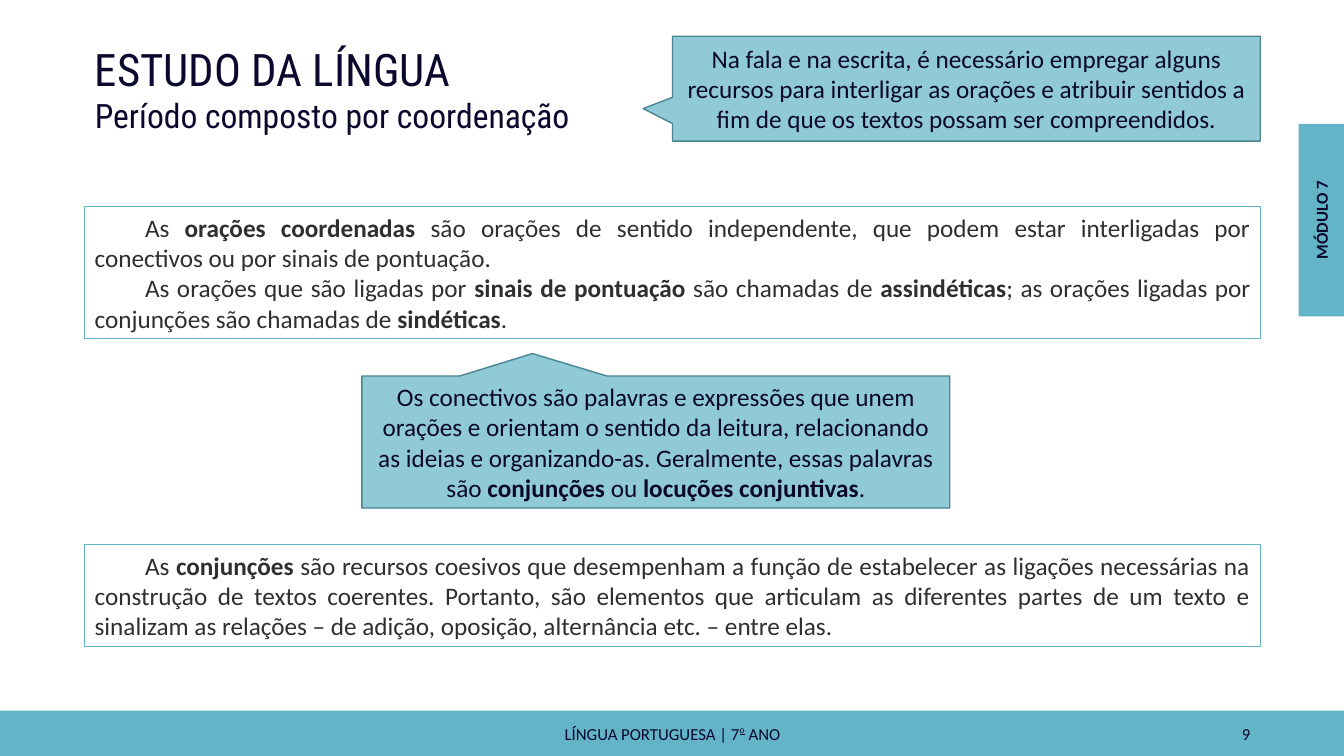
from lxml import etree
from pptx import Presentation
from pptx.dml.color import RGBColor
from pptx.enum.shapes import MSO_SHAPE
from pptx.enum.text import MSO_ANCHOR, MSO_AUTO_SIZE, PP_ALIGN
from pptx.oxml.ns import qn
from pptx.util import Inches, Pt

RECT, CALL = MSO_SHAPE.RECTANGLE, MSO_SHAPE.RECTANGULAR_CALLOUT
TOP, MIDDLE = MSO_ANCHOR.TOP, MSO_ANCHOR.MIDDLE
LEFT, CENTER, RIGHT, FULL = PP_ALIGN.LEFT, PP_ALIGN.CENTER, PP_ALIGN.RIGHT, PP_ALIGN.JUSTIFY
FIXED = MSO_AUTO_SIZE.NONE
TEAL, EDGE, NAVY, GRAY = "62B4C6", "498592", "0B082E", "2F2F2E"
WIDE, HIGH, BAR = 13.33, 7.5, 0.45
SIDE, SPAN = 0.84, 11.66

HEAD = [("ESTUDO DA LÍNGUA", 32), ("Período composto por coordenação", 24)]
USE = ("Na fala e na escrita, é necessário empregar alguns recursos para interligar as orações "
       "e atribuir sentidos a fim de que os textos possam ser compreendidos.")
LINKS = ("Os conectivos são palavras e expressões que unem orações e orientam o sentido da leitura, "
         "relacionando as ideias e organizando-as. Geralmente, essas palavras são "
         "*conjunções* ou *locuções conjuntivas*.")
CLAUSES = [
    "As *orações coordenadas *são orações de sentido independente, que podem estar "
    "interligadas por conectivos ou por sinais de pontuação.",
    "As orações que são ligadas por *sinais de pontuação *são chamadas de *assindéticas*; "
    "as orações ligadas por conjunções são chamadas de *sindéticas*."]
JOINS = [
    "As *conjunções *são recursos coesivos que desempenham a função de estabelecer as ligações "
    "necessárias na construção de textos coerentes. Portanto, são elementos que articulam as "
    "diferentes partes de um texto e sinalizam as relações – de adição, oposição, alternância "
    "etc. – entre elas."]


def color(code):
    """Turn a hex string into a colour."""
    return RGBColor.from_string(code)


def apply(target, values):
    """Set each named value on the target."""
    for name, value in values.items():
        setattr(target, name, value)


def place(shape, box):
    """Move a shape to a box given in inches."""
    names = ("left", "top", "width", "height")
    apply(shape, dict(zip(names, map(Inches, box))))


def frame(shape, anchor=MIDDLE):
    """Prepare the text frame of a shape."""
    text = shape.text_frame
    apply(text, {"word_wrap": True, "auto_size": FIXED, "vertical_anchor": anchor})
    return text


def add_run(para, words, size, ink=NAVY, face="Calibri", **style):
    """Add one formatted run to a paragraph."""
    run = para.add_run()
    run.text = words
    apply(run.font, {"name": face, "size": Pt(size), **style})
    run.font.color.rgb = color(ink)
    return run


def write(shape, lines, size, align, ink=NAVY, indent=0, anchor=MIDDLE):
    """Fill a shape with lines whose starred parts are bold."""
    text = frame(shape, anchor)
    for row, line in enumerate(lines):
        para = text.add_paragraph() if row else text.paragraphs[0]
        para.alignment = align
        if indent:
            para._p.get_or_add_pPr().set("indent", str(Inches(indent)))
        for part, words in enumerate(line.split("*")):
            add_run(para, words, size, ink, bold=part % 2 == 1)


def block(slide, box, kind=RECT, fill=None, line=None, width=1):
    """Add a flat shape with optional fill and line."""
    shape = slide.shapes.add_shape(kind, *map(Inches, box))
    shape.shadow.inherit = False
    if fill:
        shape.fill.solid()
        shape.fill.fore_color.rgb = color(fill)
    else:
        shape.fill.background()
    if line:
        shape.line.color.rgb = color(line)
        shape.line.width = Pt(width)
    else:
        shape.line.fill.background()
    return shape


def label(slide, box):
    """Add an empty text box."""
    return slide.shapes.add_textbox(*map(Inches, box))


def heading(slide, box):
    """Write the title and its subtitle in the title placeholder."""
    title = slide.shapes.title
    place(title, box)
    text = frame(title, TOP)
    for row, (words, size) in enumerate(HEAD):
        para = text.add_paragraph() if row else text.paragraphs[0]
        para.alignment = LEFT
        add_run(para, words, size, face="Roboto Condensed")


def panel(slide, box, lines):
    """Draw an outlined panel of justified text."""
    shape = block(slide, box, line=TEAL, width=0.75)
    write(shape, lines, 18, FULL, GRAY, indent=0.5)


def callout(slide, box, tip, words):
    """Draw a translucent callout pointing at its tip."""
    shape = block(slide, box, CALL, TEAL, EDGE)
    for slot, value in enumerate(tip):
        shape.adjustments[slot] = value
    tone = shape._element.spPr.find(qn("a:solidFill"))[0]
    etree.SubElement(tone, qn("a:alpha")).set("val", "70000")
    write(shape, [words], 18, CENTER)


def footer(slide, box):
    """Draw the bottom band with its subject and page number."""
    left, top, width, height = box
    block(slide, box, fill=TEAL)
    para = frame(label(slide, (left + 4.42, top + 0.04, 4.5, 0.38))).paragraphs[0]
    para.alignment = CENTER
    add_run(para, "LÍNGUA PORTUGUESA | 7", 12)
    mark = add_run(para, "o", 12, underline=True)
    mark._r.get_or_add_rPr().set("baseline", "45000")
    add_run(para, " ANO", 12)
    page = label(slide, (SIDE + SPAN - 3.08, top + 0.04, 3.08, 0.38))
    write(page, ["9"], 12, RIGHT)


def tab(slide, box):
    """Draw the side tab with its turned label."""
    left, top, width, height = box
    block(slide, box, fill=TEAL)
    deep = 0.3
    name = label(slide, (left + (width - height) / 2, top + (height - deep) / 2, height, deep))
    name.rotation = 270
    write(name, ["*MÓDULO 7*"], 12, CENTER, anchor=TOP)


def main():
    """Build the slide and save it."""
    deck = Presentation()
    apply(deck, {"slide_width": Inches(WIDE), "slide_height": Inches(HIGH)})
    slide = deck.slides.add_slide(deck.slide_layouts[5])
    footer(slide, (0, HIGH - BAR, WIDE, BAR))
    tab(slide, (WIDE - BAR, 1.23, BAR, 1.91))
    heading(slide, (SIDE, 0.36, 5.44, 1.04))
    panel(slide, (SIDE, 2.05, SPAN, 1.31), CLAUSES)
    callout(slide, (SIDE + SPAN / 2, 0.36, SPAN / 2, 1.04), (-0.55, 0.19), USE)
    callout(slide, (3.59, 3.73, SPAN / 2, 1.31), (-0.21, -0.67), LINKS)
    panel(slide, (SIDE, 5.4, SPAN, 1.01), JOINS)
    deck.save("out.pptx")


if __name__ == "__main__":
    main()
